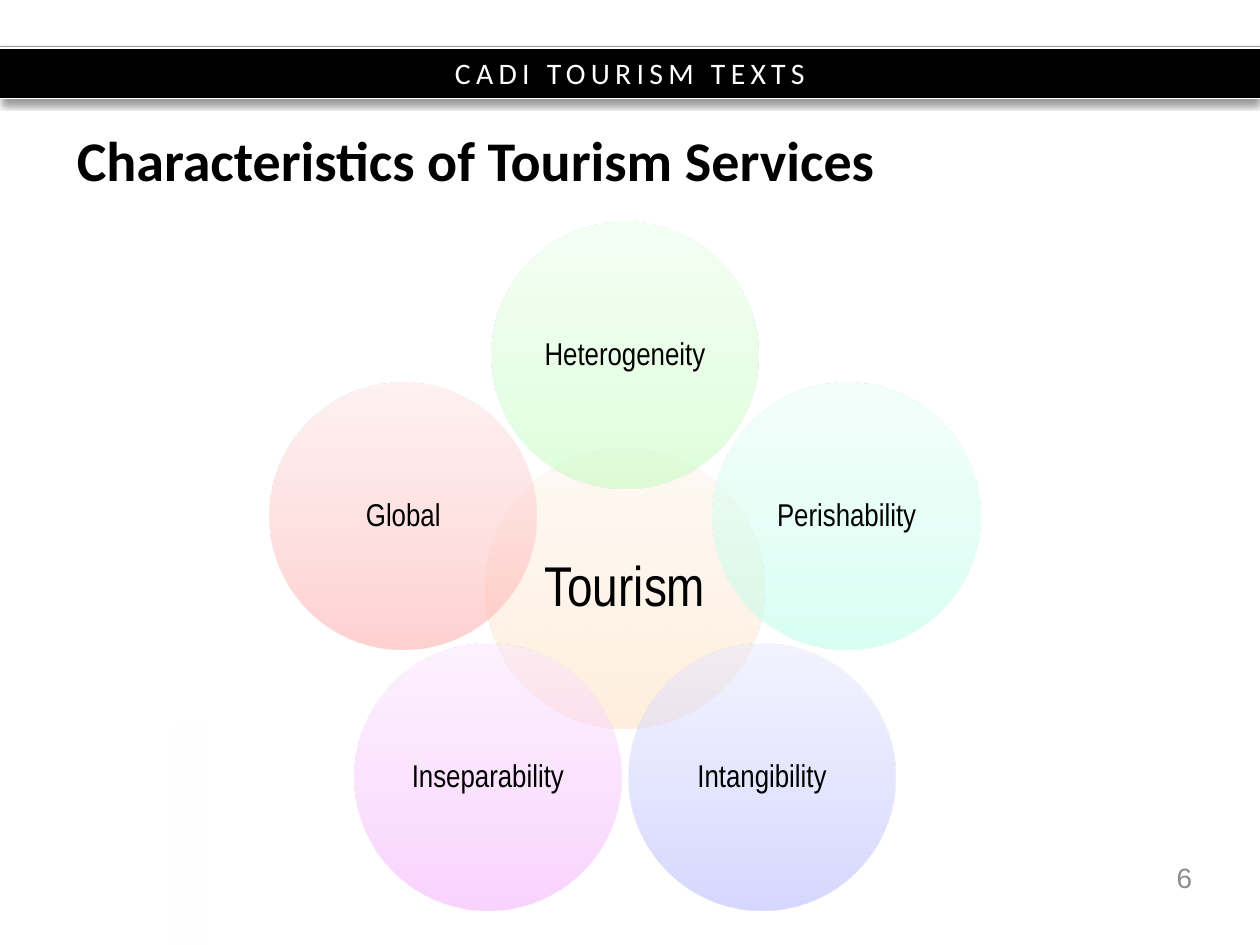
from math import cos, radians, sin

from pptx import Presentation
from pptx.dml.color import RGBColor
from pptx.enum.shapes import MSO_CONNECTOR, MSO_SHAPE
from pptx.enum.text import MSO_ANCHOR, PP_ALIGN
from pptx.oxml import parse_xml
from pptx.oxml.ns import nsdecls
from pptx.util import Inches, Pt

OVAL, RECT = MSO_SHAPE.OVAL, MSO_SHAPE.RECTANGLE
LINE = MSO_CONNECTOR.STRAIGHT
MIDDLE = MSO_ANCHOR.MIDDLE
LEFT, CENTER, RIGHT = PP_ALIGN.LEFT, PP_ALIGN.CENTER, PP_ALIGN.RIGHT

BLACK = RGBColor(0x00, 0x00, 0x00)
WHITE = RGBColor(0xFF, 0xFF, 0xFF)
GRAY = RGBColor(0x8C, 0x8C, 0x8C)
ORANGES = RGBColor(0xFF, 0xDF, 0xBC), RGBColor(0xFF, 0xE8, 0xD0), RGBColor(0xFF, 0xF6, 0xED)
GREENS = RGBColor(0xBC, 0xFF, 0xB8), RGBColor(0xD0, 0xFF, 0xCD), RGBColor(0xED, 0xFF, 0xEC)
MINTS = RGBColor(0xB3, 0xFF, 0xE8), RGBColor(0xC9, 0xFF, 0xEF), RGBColor(0xEB, 0xFF, 0xF8)
BLUES = RGBColor(0xAD, 0xB0, 0xFF), RGBColor(0xC5, 0xC7, 0xFF), RGBColor(0xE9, 0xEA, 0xFF)
PINKS = RGBColor(0xF6, 0xA8, 0xFF), RGBColor(0xF8, 0xC1, 0xFF), RGBColor(0xFC, 0xE7, 0xFF)
REDS = RGBColor(0xFF, 0xA3, 0xA3), RGBColor(0xFF, 0xBE, 0xBE), RGBColor(0xFF, 0xE6, 0xE6)


def write(shape, text, face, size, color, align):
    frame = shape.text_frame
    frame.word_wrap = True
    frame.vertical_anchor = MIDDLE
    frame.text = text
    para = frame.paragraphs[0]
    para.alignment = align
    font = para.runs[0].font
    font.name, font.size = face, Pt(size)
    font.color.rgb = color
    return para


def shade(shape, stops, angle):
    """Fill with a gradient of (percent, colour, opacity) stops; no line or shadow."""
    shape.shadow.inherit = False
    shape.line.fill.background()
    shape.fill.background()
    marks = "".join(
        f'<a:gs pos="{pos * 1000}"><a:srgbClr val="{color}">'
        f'<a:alpha val="{alpha * 1000}"/></a:srgbClr></a:gs>'
        for pos, color, alpha in stops)
    props = shape._element.spPr
    props.replace(props.find("{*}noFill"), parse_xml(
        f'<a:gradFill {nsdecls("a")} rotWithShape="1"><a:gsLst>{marks}</a:gsLst>'
        f'<a:lin ang="{angle * 60000}" scaled="0"/></a:gradFill>'))


deck = Presentation()
deck.slide_width, deck.slide_height = Inches(10), Inches(7.5)
slide = deck.slides.add_slide(deck.slide_layouts[5])

# Header band
band = slide.shapes.add_shape(RECT, 0, Inches(0.37), Inches(10), Inches(0.41))
band.fill.solid()
band.fill.fore_color.rgb = BLACK
band.line.fill.background()
band.shadow.inherit = False
band._element.spPr.find("{*}effectLst").append(parse_xml(
    f'<a:outerShdw {nsdecls("a")} blurRad="{Pt(4)}" dist="{Pt(3)}" dir="5400000" rotWithShape="0">'
    '<a:srgbClr val="000000"><a:alpha val="40000"/></a:srgbClr></a:outerShdw>'))
header = write(band, "CADI TOURISM TEXTS", "Calibri", 17, WHITE, CENTER)
header.runs[0].font._element.set("spc", "300")

for y in (0.38, 0.78):
    edge = slide.shapes.add_connector(LINE, 0, Inches(y), Inches(10), Inches(y))
    edge.line.color.rgb = WHITE
    edge.line.width = Pt(0.75)
    edge._element.spPr.append(parse_xml(f'<a:effectLst {nsdecls("a")}/>'))

# Fading strip at the lower left
strip = slide.shapes.add_shape(RECT, Inches(1.37), Inches(5.75), Inches(0.26), Inches(1.75))
shade(strip, [(0, WHITE, 0), (100, WHITE, 100)], 0)

# Hub with five petals, clockwise from the top
hub_x, hub_y, reach = 4.96, 4.67, 1.85
petals = [
    ("Heterogeneity", GREENS),
    ("Perishability", MINTS),
    ("Intangibility", BLUES),
    ("Inseparability", PINKS),
    ("Global", REDS),
]
circles = [("Tourism", ORANGES, hub_x, hub_y, 2.22, 32)]
for i, (name, colors) in enumerate(petals):
    turn = radians(i * 360 / len(petals))
    circles.append((name, colors, hub_x + reach * sin(turn),
                    hub_y - reach * cos(turn), 2.12, 18))

for name, colors, x, y, size, points in circles:
    circle = slide.shapes.add_shape(
        OVAL, Inches(x - size / 2), Inches(y - size / 2), Inches(size), Inches(size))
    shade(circle, zip((0, 35, 100), colors, (50, 50, 50)), 270)
    frame = circle.text_frame
    frame.margin_left = frame.margin_right = frame.margin_top = frame.margin_bottom = 0
    write(circle, name, "Arial Narrow", points, BLACK, CENTER).line_spacing = 0.9

# Title and page number
title = slide.shapes.title
title.left, title.top = Inches(0.51), Inches(1.07)
title.width, title.height = Inches(9.05), Inches(0.48)
para = write(title, "Characteristics of Tourism Services", "Calibri", 32, BLACK, LEFT)
para.line_spacing = Pt(32)
para.runs[0].font.bold = True

number = slide.shapes.add_textbox(Inches(7.23), Inches(6.76), Inches(2.33), Inches(0.4))
write(number, "6", "Arial", 16, GRAY, RIGHT)

deck.save("out.pptx")
